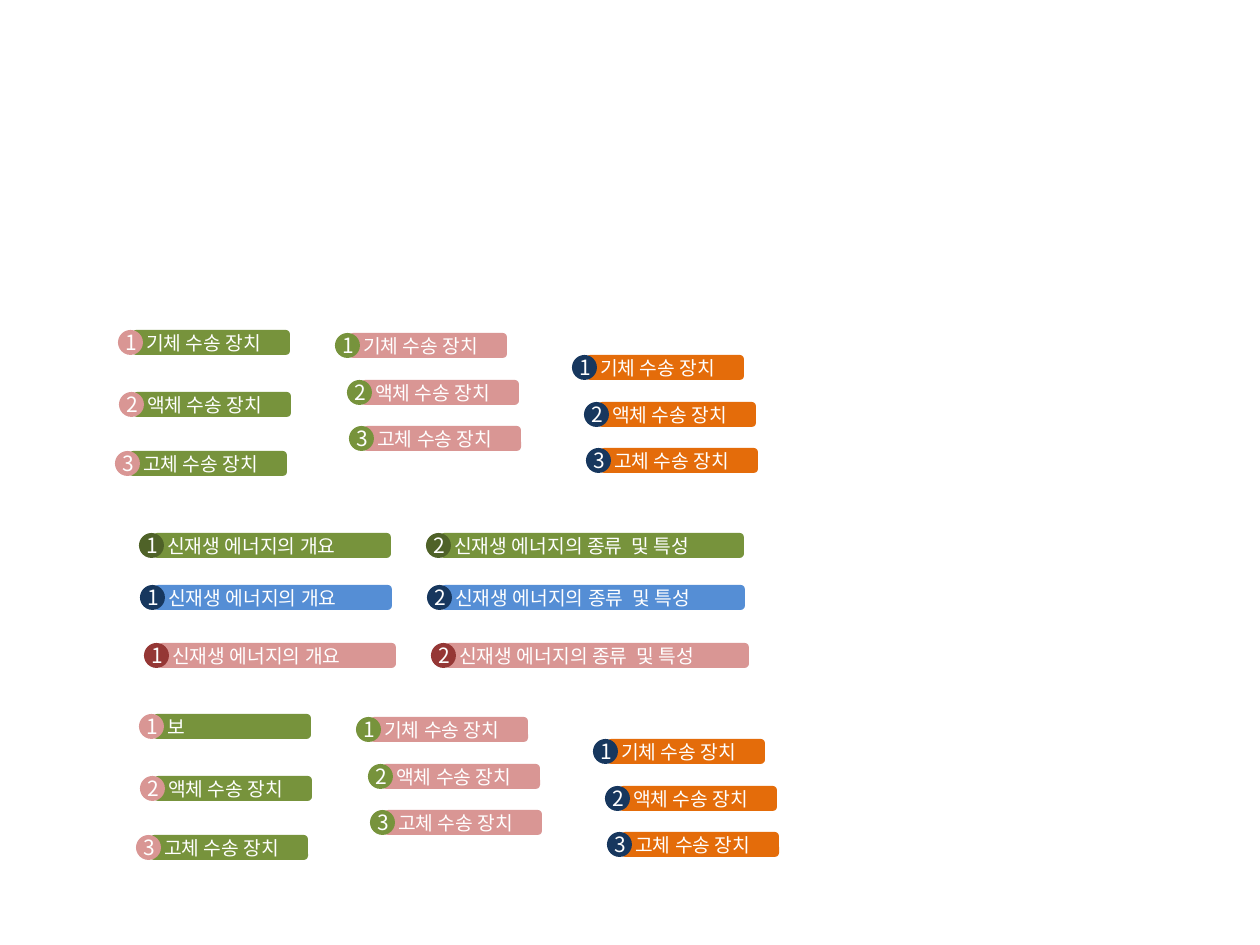
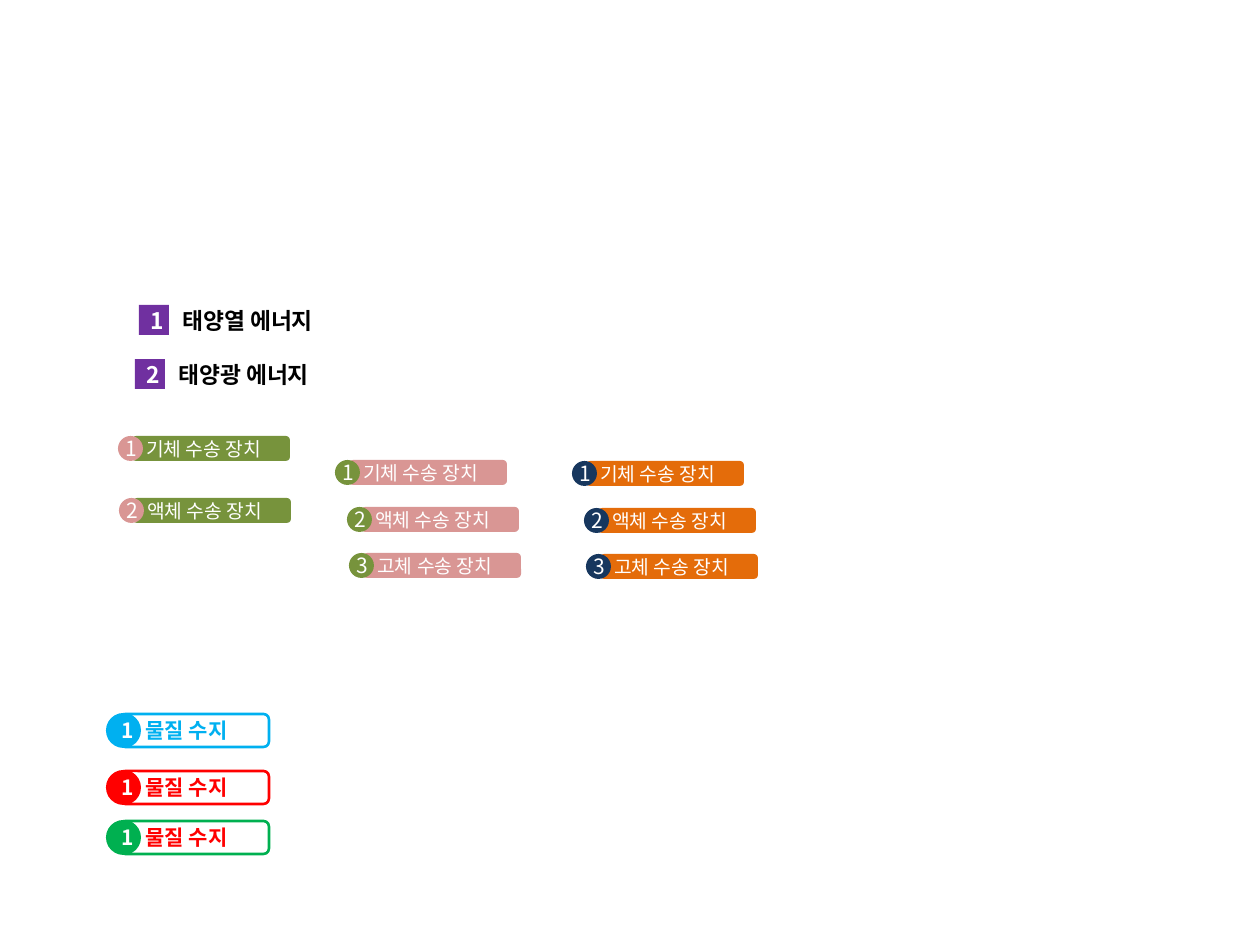
"""Two slides of numbered label bars in several colour schemes."""
from lxml.etree import SubElement
from pptx import Presentation
from pptx.dml.color import RGBColor as RGB
from pptx.enum.shapes import MSO_SHAPE as SHAPE
from pptx.enum.text import MSO_ANCHOR as ANCHOR, PP_ALIGN as ALIGN
from pptx.oxml.ns import qn
from pptx.util import Pt

PX = 914400 / 126
FONT = "Noto Sans CJK KR"
COLORS = {
    "white": "FFFFFF", "black": "000000", "green": "77933C", "forest": "4F6228",
    "pink": "D99694", "maroon": "953735", "orange": "E46C0A", "navy": "17375E",
    "blue": "558ED5", "purple": "7030A0", "sky": "00B0F0", "red": "FF0000",
    "emerald": "00B050",
}
DEVICES = ["기체 수송 장치", "액체 수송 장치", "고체 수송 장치"]
TOPICS = [("신재생 에너지의 개요", 238), ("신재생 에너지의 종류  및 특성", 304)]
TOPIC_STEP = 287
WIDE_STEPS = [(0, 0), (1, 62), (-3, 121)]
TIGHT_STEPS = [(0, 0), (12, 47), (14, 93)]


def emu(px):
    """Turn a length in px into EMU."""
    return round(px * PX)


def color(name):
    """Look up a named colour."""
    return RGB.from_string(COLORS[name])


def add_part(s, kind, box, text, size, ink, fill=None, line=None,
             bold=False, inset=0, align=ALIGN.LEFT):
    """Draw one shape with a single line of text."""
    sp = s.shapes.add_shape(kind, *map(emu, box))
    sp.shadow.inherit = False
    if fill:
        sp.fill.solid()
        sp.fill.fore_color.rgb = color(fill)
    else:
        sp.fill.background()
    if line:
        sp.line.color.rgb = color(line)
        sp.line.width = Pt(1.5)
    else:
        sp.line.fill.background()
    tf = sp.text_frame
    tf.word_wrap = False
    tf.vertical_anchor = ANCHOR.MIDDLE
    tf.margin_left = emu(inset)
    tf.margin_right = tf.margin_top = tf.margin_bottom = 0
    p = tf.paragraphs[0]
    p.alignment = align
    r = p.add_run()
    r.text = text
    r.font.size = Pt(size)
    r.font.bold = bold
    r.font.color.rgb = color(ink)
    r.font.name = FONT
    SubElement(r.font._element, qn("a:ea")).set("typeface", FONT)


def add_label(s, x, y, number, text, width, bar, badge):
    """Draw a filled bar with a round number badge at its left end."""
    add_part(s, SHAPE.ROUNDED_RECTANGLE, (x + 14, y, width, 25), text, 11,
             "white", fill=bar, inset=13)
    add_part(s, SHAPE.OVAL, (x, y, 25, 25), str(number), 12, "white",
             fill=badge, inset=2, align=ALIGN.CENTER)


def add_device_list(s, x, y, steps, bar, badge, texts=DEVICES):
    """Draw a column of device labels, each shifted by its step."""
    for n, ((dx, dy), text) in enumerate(zip(steps, texts), 1):
        add_label(s, x + dx, y + dy, n, text, 158, bar, badge)


def add_device_group(s, x, y, pink_y, orange_y, texts=DEVICES):
    """Draw the green, pink and orange device lists side by side."""
    add_device_list(s, x, y, WIDE_STEPS, "green", "pink", texts)
    add_device_list(s, x + 217, pink_y, TIGHT_STEPS, "pink", "green")
    add_device_list(s, x + 454, orange_y, TIGHT_STEPS, "orange", "navy")


def add_topic_row(s, x, y, bar, badge):
    """Draw the two topic labels in one row."""
    for i, (text, width) in enumerate(TOPICS):
        add_label(s, x + i * TOPIC_STEP, y, i + 1, text, width, bar, badge)


def add_heading(s, x, y, number, text):
    """Draw a bold heading with a square number box."""
    add_part(s, SHAPE.ROUNDED_RECTANGLE, (x + 29, y, 238, 30), text, 13,
             "black", fill="white", bold=True, inset=13)
    add_part(s, SHAPE.RECTANGLE, (x, y, 30, 30), str(number), 13, "white",
             fill="purple", bold=True, inset=7, align=ALIGN.CENTER)


def add_outline_label(s, x, y, accent, ink):
    """Draw an outlined label with a large round badge."""
    add_part(s, SHAPE.ROUNDED_RECTANGLE, (x + 14, y + 1, 149, 33), "물질 수지",
             12, ink, line=accent, bold=True, inset=24)
    add_part(s, SHAPE.OVAL, (x, y, 35, 35), "1", 12, "white", fill=accent,
             bold=True, inset=9, align=ALIGN.CENTER)


def build_topic_slide(s):
    """Build the slide of device groups and topic rows."""
    add_device_group(s, 118, 330, 333, 355)
    for x, y, bar, badge in [(139, 533, "green", "forest"),
                             (140, 585, "blue", "navy"),
                             (144, 643, "pink", "maroon")]:
        add_topic_row(s, x, y, bar, badge)
    add_device_group(s, 139, 714, 717, 739, ["보"] + DEVICES[1:])


def build_heading_slide(s):
    """Build the slide of headings, devices and outlined labels."""
    add_heading(s, 139, 305, 1, "태양열 에너지")
    add_heading(s, 135, 359, 2, "태양광 에너지")
    add_device_group(s, 118, 436, 460, 461, DEVICES[:2])
    for y, accent, ink in [(713, "sky", "sky"), (770, "red", "red"),
                           (820, "emerald", "red")]:
        add_outline_label(s, 106, y, accent, ink)


def main():
    """Build and save the presentation."""
    prs = Presentation()
    prs.slide_width, prs.slide_height = emu(1260), emu(945)
    for build in (build_topic_slide, build_heading_slide):
        build(prs.slides.add_slide(prs.slide_layouts[6]))
    prs.save("out.pptx")


if __name__ == "__main__":
    main()
